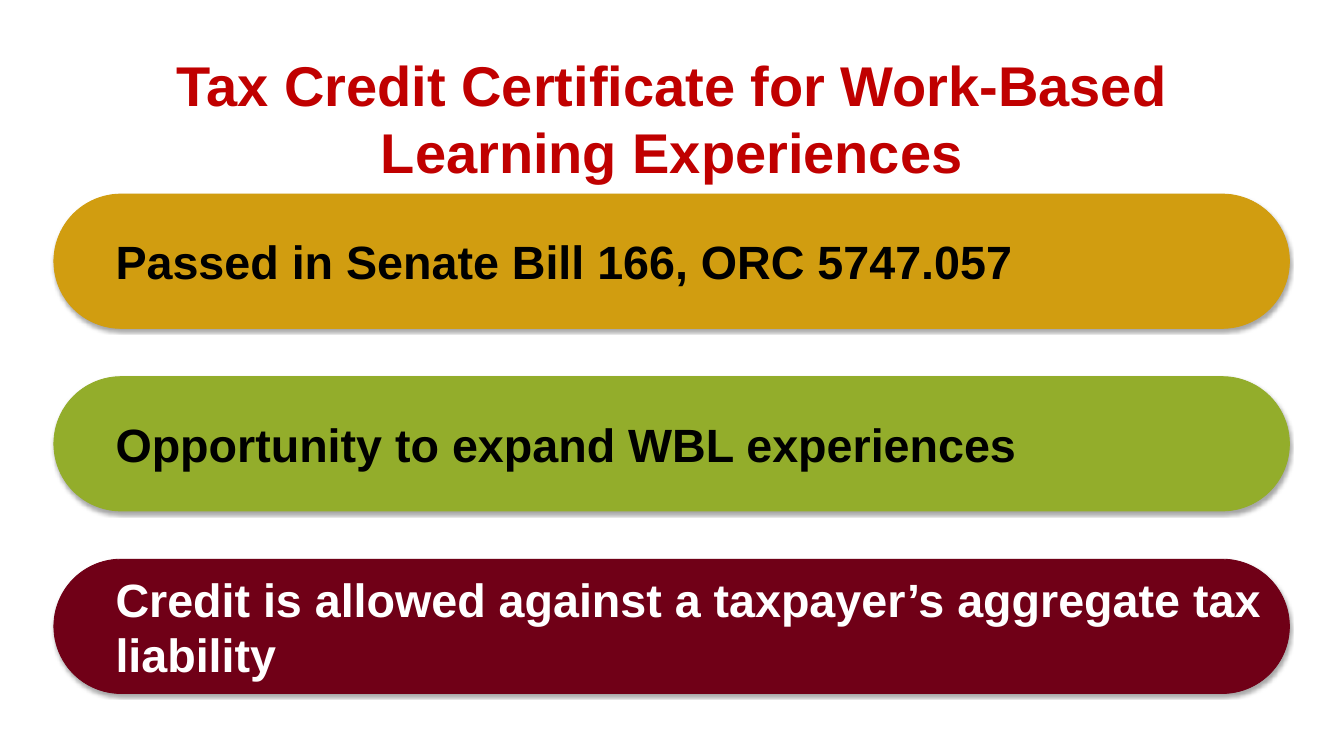
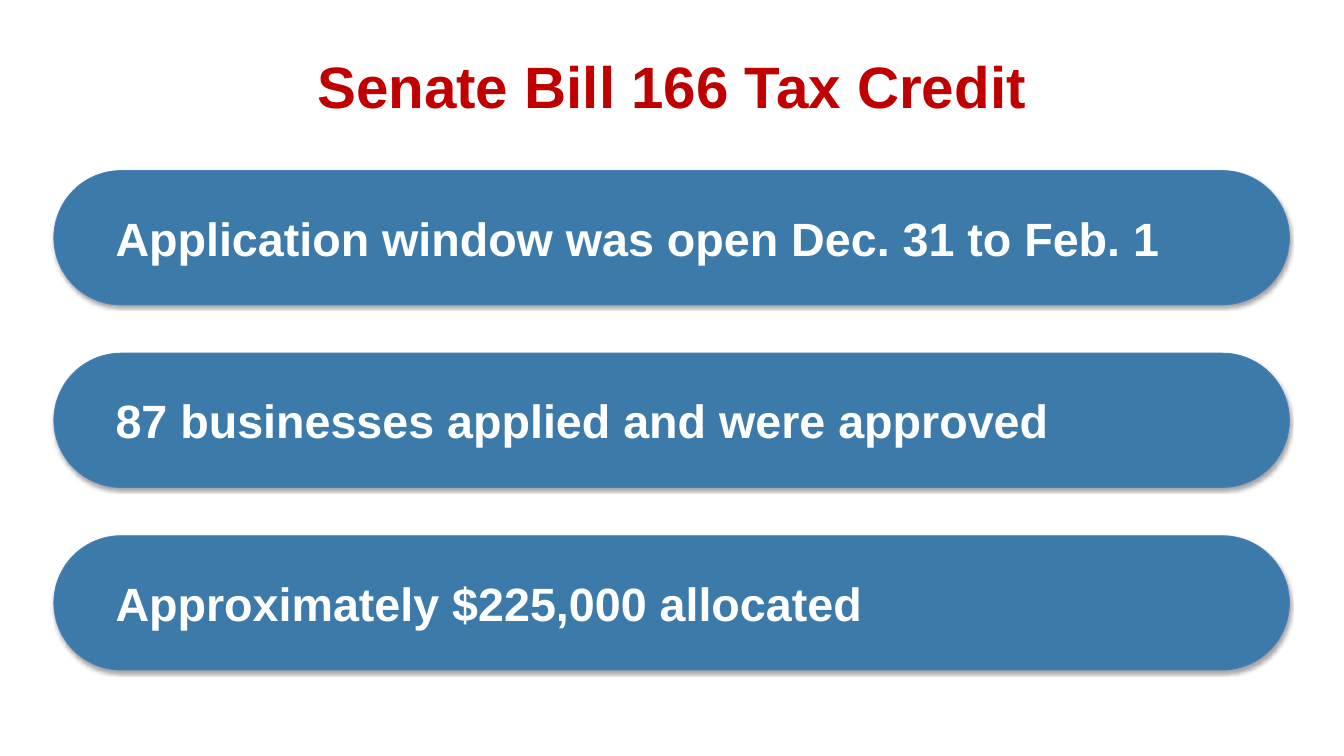
from lxml.etree import SubElement
from pptx import Presentation
from pptx.dml.color import RGBColor as Rgb
from pptx.enum.shapes import MSO_SHAPE as Kind
from pptx.enum.text import MSO_ANCHOR as Anchor, MSO_AUTO_SIZE as Auto, PP_ALIGN as Align
from pptx.oxml.ns import qn
from pptx.util import Cm, Pt

FONT = "Arial"
HUES = {
    "title": "C00000", "gold": "D19D10", "green": "93AD2B", "wine": "700017",
    "blue": "3C7BA9", "edge": "4B7EBC", "black": "000000", "white": "FFFFFF",
}
LEFT, WIDTH, HEIGHT, STEP = 1.63, 37.36, 4.06, 5.52


def hue(name):
    """Return the named colour."""
    return Rgb.from_string(HUES[name])


def write(frame, text, size, color, align):
    """Put one bold run into a text frame."""
    para = frame.paragraphs[0]
    para.alignment = align
    run = para.add_run()
    run.text = text
    font = run.font
    font.name, font.size, font.bold = FONT, Pt(size), True
    font.color.rgb = hue(color)


def inset(frame, left, top, right, bottom):
    """Set the four margins of a text frame in centimetres."""
    frame.margin_left, frame.margin_top = Cm(left), Cm(top)
    frame.margin_right, frame.margin_bottom = Cm(right), Cm(bottom)


def shade(shape):
    """Give a shape a soft shadow straight below it."""
    shape.shadow.inherit = False
    effects = shape._element.spPr.find(qn("a:effectLst"))
    outer = SubElement(effects, qn("a:outerShdw"), blurRad=str(Pt(3.1)),
                       dist=str(Pt(1.8)), dir="5400000", rotWithShape="0")
    color = SubElement(outer, qn("a:srgbClr"), val=HUES["black"])
    SubElement(color, qn("a:alpha"), val="35000")


def add_title(slide, text, size, height):
    """Place and format the slide title."""
    title = slide.shapes.title
    title.left, title.top = Cm(2.03), Cm(1.52)
    title.width, title.height = Cm(36.58), Cm(height)
    frame = title.text_frame
    frame.word_wrap, frame.auto_size = True, Auto.SHAPE_TO_FIT_TEXT
    frame.vertical_anchor = Anchor.TOP
    inset(frame, 0, 0, 0, 0)
    write(frame, text, size, "title", Align.CENTER)


def add_bar(slide, top, text, fill, edge, color):
    """Draw one rounded bar with its statement."""
    bar = slide.shapes.add_shape(Kind.ROUNDED_RECTANGLE, Cm(LEFT), Cm(top),
                                 Cm(WIDTH), Cm(HEIGHT))
    bar.adjustments[0] = 0.5
    bar.fill.solid()
    bar.fill.fore_color.rgb = hue(fill)
    bar.line.color.rgb = hue(edge)
    bar.line.width = Pt(0.75)
    shade(bar)
    frame = bar.text_frame
    frame.word_wrap, frame.vertical_anchor = True, Anchor.MIDDLE
    inset(frame, 1.27, 0.13, 0.25, 0.13)
    write(frame, text, 40, color, Align.LEFT)


def add_slide(deck, title, size, height, top, bars):
    """Add a titled slide with evenly spaced bars."""
    slide = deck.slides.add_slide(deck.slide_layouts[5])
    add_title(slide, title, size, height)
    for row, bar in enumerate(bars):
        add_bar(slide, top + row * STEP, *bar)


def main():
    """Build and save the deck."""
    deck = Presentation()
    deck.slide_width, deck.slide_height = Cm(40.64), Cm(22.86)
    add_slide(deck, "Tax Credit Certificate for Work-Based Learning Experiences",
              48, 4.11, 5.87, [
                  ("Passed in Senate Bill 166, ORC 5747.057", "gold", "gold", "black"),
                  ("Opportunity to expand WBL experiences", "green", "green", "black"),
                  ("Credit is allowed against a taxpayer’s aggregate tax liability",
                   "wine", "wine", "white"),
              ])
    facts = ["Application window was open Dec. 31 to Feb. 1",
             "87 businesses applied and were approved",
             "Approximately $225,000 allocated"]
    add_slide(deck, "Senate Bill 166 Tax Credit", 50, 2.13, 5.16,
              [(fact, "blue", "edge", "white") for fact in facts])
    deck.save("out.pptx")


if __name__ == "__main__":
    main()
